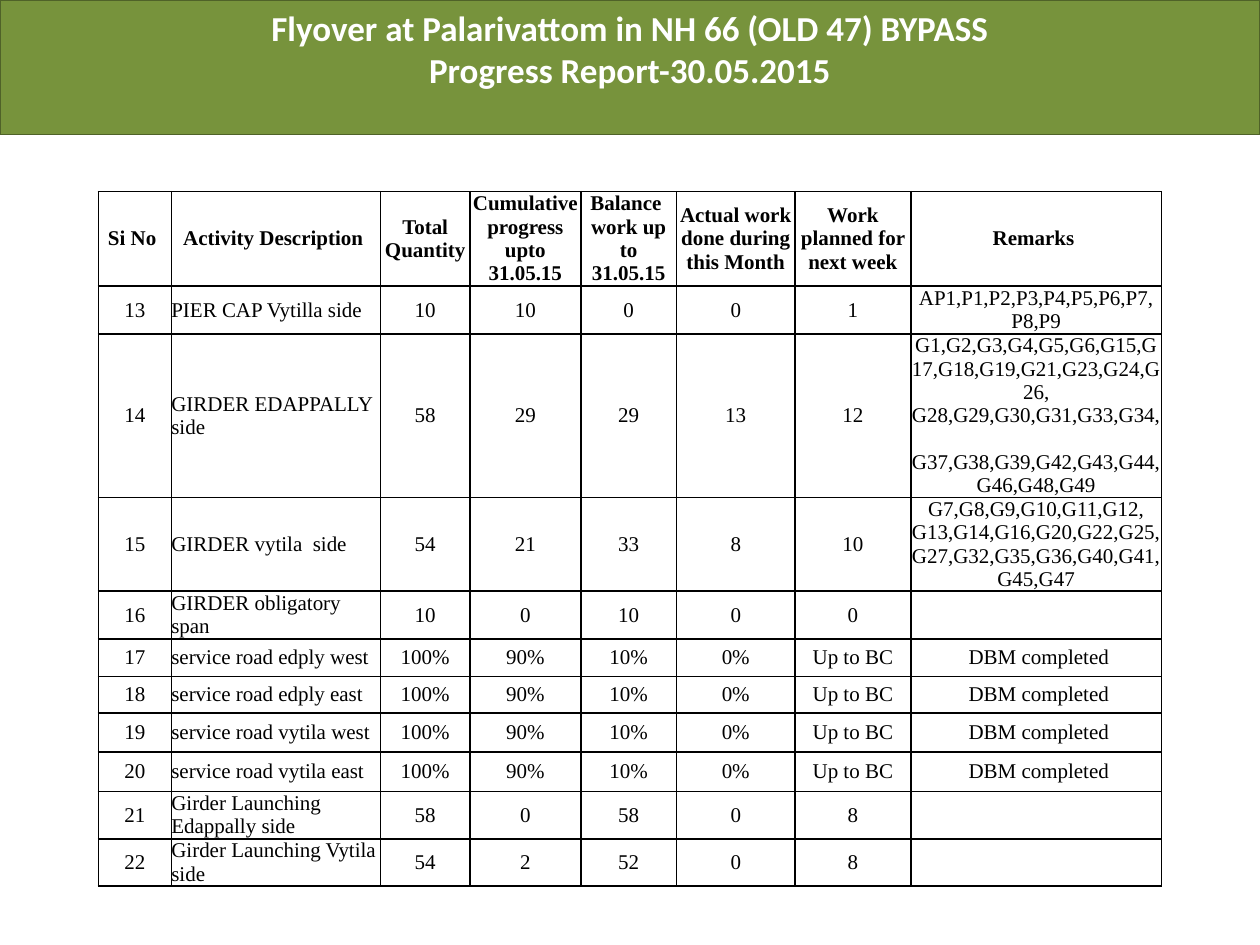
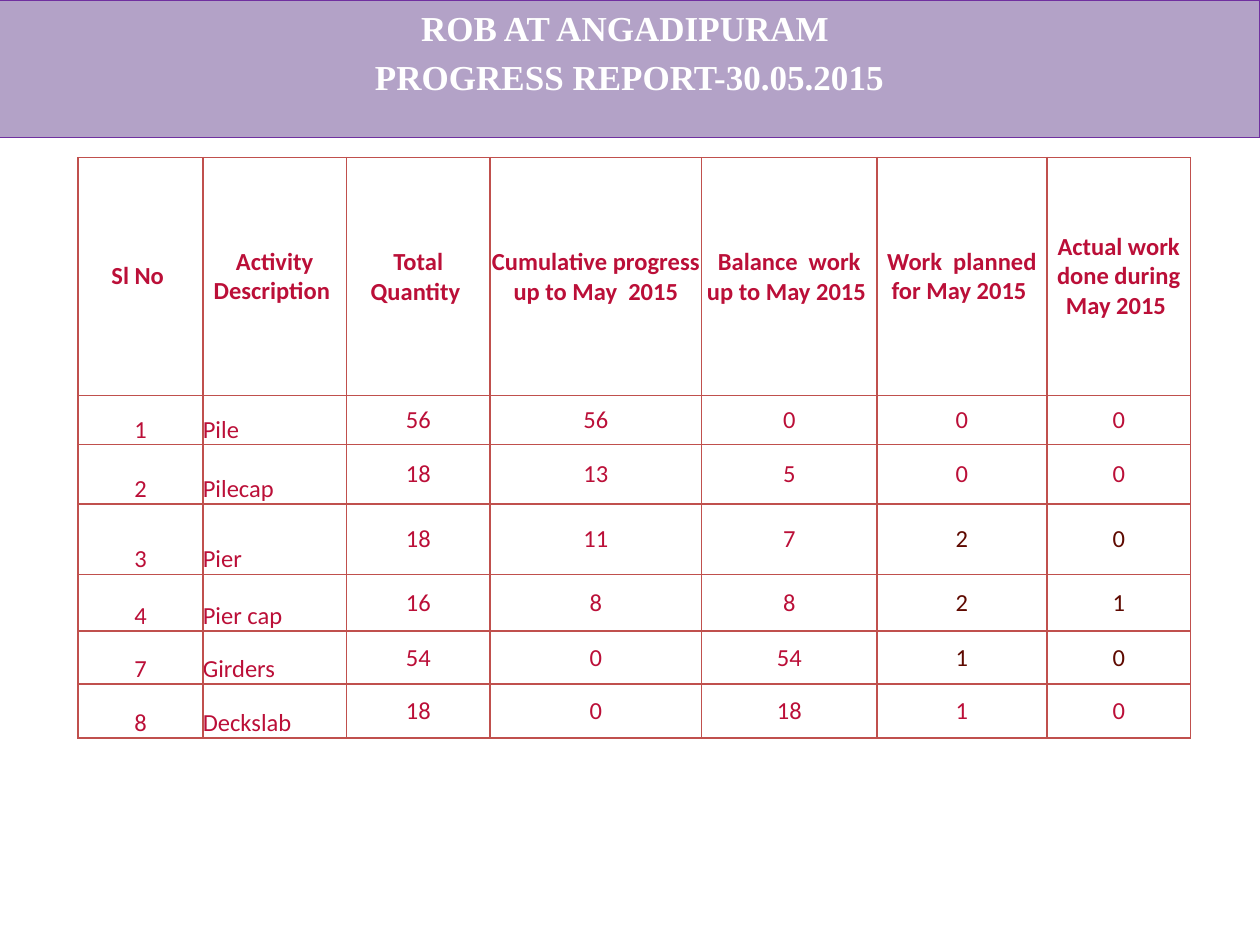
from lxml.etree import SubElement
from pptx import Presentation
from pptx.dml.color import RGBColor
from pptx.enum.shapes import MSO_SHAPE as Shape
from pptx.enum.text import MSO_ANCHOR as Anchor, PP_ALIGN as Align
from pptx.oxml.ns import qn
from pptx.util import Inches, Pt

WHITE = RGBColor(0xFF, 0xFF, 0xFF)
BLACK = RGBColor(0x00, 0x00, 0x00)
OLIVE = RGBColor(0x77, 0x93, 0x3C)
DARK_OLIVE = RGBColor(0x4F, 0x62, 0x28)
LILAC = RGBColor(0xB3, 0xA2, 0xC7)
PURPLE = RGBColor(0x70, 0x30, 0xA0)
BRICK = RGBColor(0xC0, 0x50, 0x4D)
CRIMSON = RGBColor(0xBB, 0x0F, 0x38)
MAROON = RGBColor(0x5F, 0x0A, 0x01)
SANS, SERIF = "Calibri", "Times New Roman"

SERVICE_ROADS = [
    (number, f"service road {road}", "100%", "90%", "10%", "0%", "Up to BC", " DBM completed")
    for number, road in enumerate(("edply west", "edply east", "vytila west", "vytila east"), 17)
]

FLYOVER = {
    "title": ("Flyover at Palarivattom in NH 66 (OLD 47) BYPASS", "Progress Report-30.05.2015"),
    "title_font": SANS, "title_gap": 0,
    "band": OLIVE, "band_line": DARK_OLIVE, "band_left": 0, "band_height": 1.07,
    "origin": (0.78, 1.52),
    "columns": (0.58, 1.66, 0.71, 0.88, 0.76, 0.94, 0.92, 1.99),
    "heights": (0.75, 0.38, 1.3, 0.74, 0.38, 0.3, 0.29, 0.31, 0.31, 0.38, 0.37),
    "font": SERIF, "size": 12, "ink": BLACK, "grid": BLACK,
    "label_anchor": Anchor.MIDDLE, "accents": set(), "inset_headers": (),
    "rows": [
        ("Si No ", "Activity Description ", "Total Quantity",
         "Cumulative progress upto 31.05.15", "Balance  work up to 31.05.15",
         "Actual work done during this Month", "Work planned for next week", "Remarks "),
        (13, "PIER CAP Vytilla side", 10, 10, 0, 0, 1, "AP1,P1,P2,P3,P4,P5,P6,P7, P8,P9"),
        (14, "GIRDER EDAPPALLY side", 58, 29, 29, 13, 12,
         "G1,G2,G3,G4,G5,G6,G15,G17,G18,G19,G21,G23,G24,G26, "
         "G28,G29,G30,G31,G33,G34,  G37,G38,G39,G42,G43,G44,G46,G48,G49"),
        (15, "GIRDER vytila  side", 54, 21, 33, 8, 10,
         "G7,G8,G9,G10,G11,G12, G13,G14,G16,G20,G22,G25, "
         "G27,G32,G35,G36,G40,G41, G45,G47"),
        (16, "GIRDER obligatory span", 10, 0, 10, 0, 0, ""),
        *SERVICE_ROADS,
        (21, "Girder Launching Edappally side", 58, 0, 58, 0, 8, ""),
        (22, "Girder Launching Vytila side", 54, 2, 52, 0, 8, ""),
    ],
}

ROB = {
    "title": ("ROB AT ANGADIPURAM ", "PROGRESS REPORT-30.05.2015"),
    "title_font": SERIF, "title_gap": 4,
    "band": LILAC, "band_line": PURPLE, "band_left": -0.01, "band_height": 1.09,
    "origin": (0.62, 1.25),
    "columns": (0.99, 1.14, 1.14, 1.68, 1.39, 1.35, 1.14),
    "heights": (1.89, 0.39, 0.47, 0.56, 0.45, 0.42, 0.43),
    "font": SANS, "size": 14, "ink": CRIMSON, "grid": BRICK,
    "label_anchor": Anchor.BOTTOM, "inset_headers": (2, 3, 4),
    "accents": {(row, column) for row in (3, 4, 5) for column in (5, 6)},
    "rows": [
        ("Sl No ", "Activity Description ", "Total Quantity ",
         "Cumulative progress up to May  2015", "Balance  work up to May 2015 ",
         "Work  planned for May 2015 ", "Actual work done during May 2015 "),
        (1, "Pile", 56, 56, 0, 0, 0),
        (2, "Pilecap", 18, 13, 5, 0, 0),
        (3, "Pier", 18, 11, 7, 2, 0),
        (4, "Pier cap", 16, 8, 8, 2, 1),
        (7, "Girders", 54, 0, 54, 1, 0),
        (8, "Deckslab", 18, 0, 18, 1, 0),
    ],
}


def write(paragraph, text, font, size, ink, bold):
    run = paragraph.add_run()
    run.text = text
    run.font.name, run.font.size, run.font.bold = font, Pt(size), bold
    run.font.color.rgb = ink


def add_title_band(slide, report, width):
    left = Inches(report["band_left"])
    band = slide.shapes.add_shape(
        Shape.RECTANGLE, left, 0, width - left, Inches(report["band_height"]))
    band.shadow.inherit = False
    band.fill.solid()
    band.fill.fore_color.rgb = report["band"]
    band.line.color.rgb = report["band_line"]
    band.line.width = Pt(0.75)
    frame = band.text_frame
    frame.word_wrap = True
    frame.vertical_anchor = Anchor.TOP
    frame.margin_top = Inches(0.05)
    for index, line in enumerate(report["title"]):
        paragraph = frame.add_paragraph() if index else frame.paragraphs[0]
        paragraph.alignment = Align.CENTER
        paragraph.space_before = Pt(report["title_gap"] if index else 0)
        write(paragraph, line, report["title_font"], 20, WHITE, True)


def add_borders(cell, color):
    properties = cell._tc.get_or_add_tcPr()
    for side in ("a:lnL", "a:lnR", "a:lnT", "a:lnB"):
        border = SubElement(properties, qn(side), w=str(Pt(1)))
        SubElement(SubElement(border, qn("a:solidFill")), qn("a:srgbClr"), val=str(color))


def fill_cell(cell, value, row, column, report):
    is_header = row == 0
    add_borders(cell, report["grid"])
    cell.fill.solid()
    cell.fill.fore_color.rgb = WHITE
    inset = Inches(0.01) if is_header and column in report["inset_headers"] else 0
    cell.margin_left = cell.margin_right = cell.margin_top = inset
    cell.margin_bottom = 0
    is_label = column < 2 and not is_header
    cell.vertical_anchor = report["label_anchor"] if is_label else Anchor.MIDDLE
    paragraph = cell.text_frame.paragraphs[0]
    paragraph.alignment = Align.LEFT if is_label and column == 1 else Align.CENTER
    if value != "":
        ink = MAROON if (row, column) in report["accents"] else report["ink"]
        write(paragraph, str(value), report["font"], report["size"], ink, is_header)


def add_progress_table(slide, report):
    left, top = report["origin"]
    columns, heights = report["columns"], report["heights"]
    table = slide.shapes.add_table(
        len(heights), len(columns), Inches(left), Inches(top),
        Inches(sum(columns)), Inches(sum(heights))).table
    table.first_row = table.horz_banding = False
    for column, width in zip(table.columns, columns):
        column.width = Inches(width)
    for row, height in zip(table.rows, heights):
        row.height = Inches(height)
    for row, values in enumerate(report["rows"]):
        for column, value in enumerate(values):
            fill_cell(table.cell(row, column), value, row, column, report)


def main():
    deck = Presentation()
    deck.slide_width, deck.slide_height = Inches(10), Inches(7.5)
    for report in (FLYOVER, ROB):
        slide = deck.slides.add_slide(deck.slide_layouts[6])
        add_title_band(slide, report, deck.slide_width)
        add_progress_table(slide, report)
    deck.save("out.pptx")


if __name__ == "__main__":
    main()
